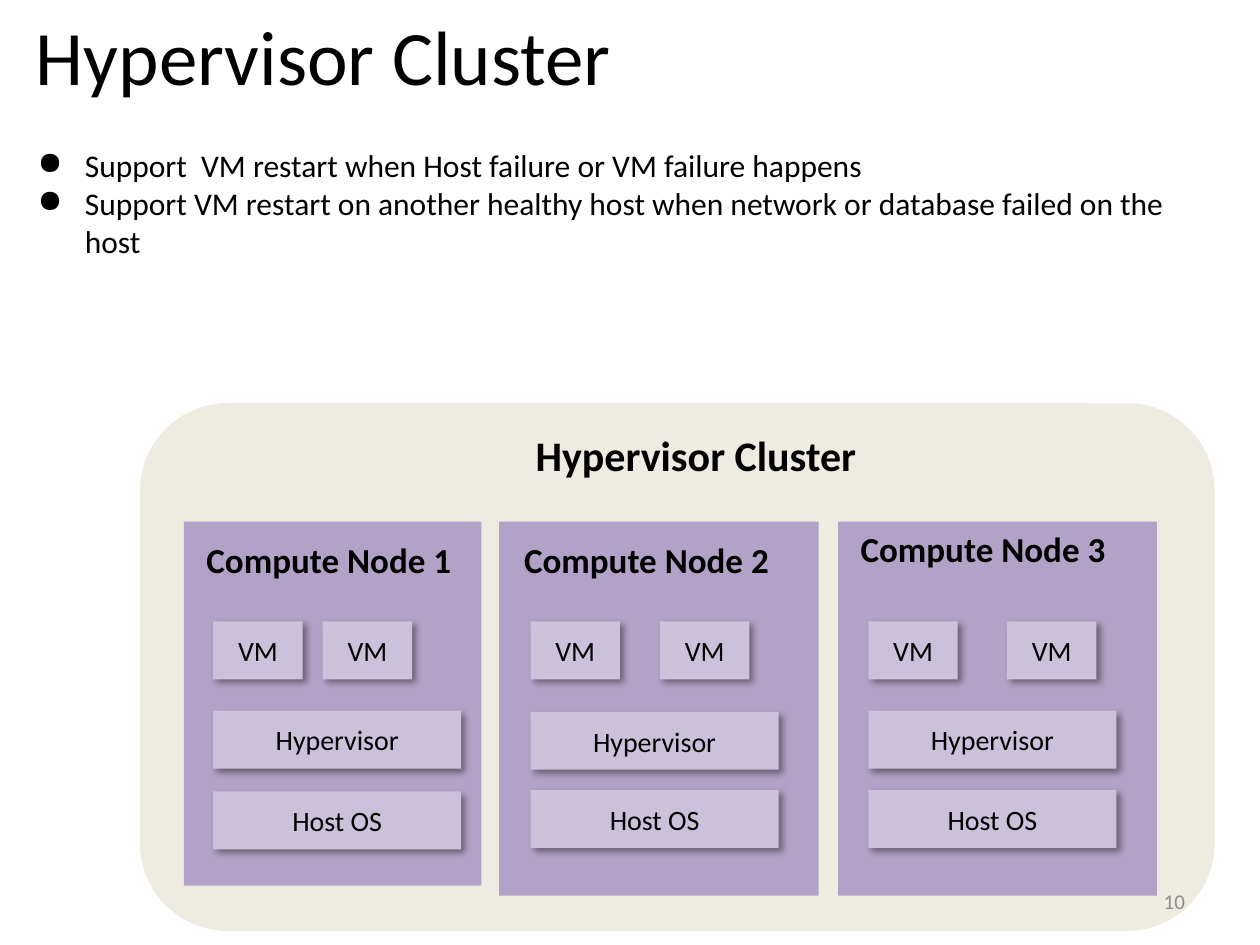
from lxml.etree import SubElement
from pptx import Presentation
from pptx.dml.color import RGBColor
from pptx.enum.shapes import MSO_SHAPE as Shape
from pptx.enum.text import MSO_ANCHOR as Anchor, PP_ALIGN as Align
from pptx.oxml.ns import qn
from pptx.util import Pt

COLORS = {
    "text": "000000",
    "number": "8C8C8C",
    "cluster": "EEECE1",
    "node": "B3A2C7",
    "part": "CCC1DA",
}
PART_HEIGHT = 33.1
VM_WIDTH = 51.1
BAR_WIDTH = 141.8


def color(name):
    return RGBColor.from_string(COLORS[name])


def write(shape, lines, size, align=Align.LEFT, anchor=Anchor.TOP,
          bold=False, ink="text"):
    frame = shape.text_frame
    frame.word_wrap = True
    frame.vertical_anchor = anchor
    for index, line in enumerate(lines):
        paragraph = frame.paragraphs[0] if index == 0 else frame.add_paragraph()
        paragraph.alignment = align
        run = paragraph.add_run()
        run.text = line
        for key, value in {"name": "Calibri", "size": Pt(size), "bold": bold}.items():
            setattr(run.font, key, value)
        run.font.color.rgb = color(ink)


def add_text(slide, box, lines, size, **style):
    text = slide.shapes.add_textbox(*map(Pt, box))
    write(text, lines, size, **style)
    return text


def add_block(slide, box, fill, kind=Shape.RECTANGLE):
    block = slide.shapes.add_shape(kind, *map(Pt, box))
    block.fill.solid()
    block.fill.fore_color.rgb = color(fill)
    block.line.fill.background()
    block.shadow.inherit = False
    return block


def add_part(slide, box, label):
    """A labelled part of a node, with a soft shadow to the lower right."""
    part = add_block(slide, box, "part")
    write(part, [label], 16, align=Align.CENTER, anchor=Anchor.MIDDLE)
    effects = part.element.spPr.find(qn("a:effectLst"))
    shadow = SubElement(effects, qn("a:outerShdw"), blurRad=str(Pt(4)),
                        dist=str(Pt(3)), dir="2700000", algn="tl", rotWithShape="0")
    black = SubElement(shadow, qn("a:srgbClr"), val="000000")
    SubElement(black, qn("a:alpha"), val="40000")


def add_bullets(slide, box, lines):
    bullets = add_text(slide, box, lines, 18)
    for paragraph in bullets.text_frame.paragraphs:
        properties = paragraph._p.get_or_add_pPr()
        properties.set("marL", str(Pt(27)))
        properties.set("indent", str(-Pt(27)))
        SubElement(properties, qn("a:buChar"), char="●")


def add_node(slide, box, name, heading, inset, vm_step, bar_tops):
    """A compute node: heading, two VMs, then the hypervisor and host bars."""
    left, top, width, height = box
    add_block(slide, box, "node")
    dx, dy = heading
    add_text(slide, (left + dx, top + dy, 166, 31.5), [name], 20, bold=True)
    for column in range(2):
        add_part(slide, (left + inset + column * vm_step, top + 57,
                         VM_WIDTH, PART_HEIGHT), "VM")
    for label, bar_top in zip(("Hypervisor", "Host OS"), bar_tops):
        add_part(slide, (left + inset, top + bar_top, BAR_WIDTH, PART_HEIGHT), label)


def add_cluster(slide, box):
    left, top, width, height = box
    add_block(slide, box, "cluster", Shape.ROUNDED_RECTANGLE)
    add_text(slide, (left + 126.7, top + 11.5, 376.6, 36), [" Hypervisor Cluster"],
             24, align=Align.CENTER, bold=True)
    # left, width, height, heading offset, part inset, VM step, bar tops
    nodes = [
        (25.1, 170, 208, (5.8, 5.8), 16.7, 62.6, (108, 154.2)),
        (205.2, 182.6, 213.8, (7.2, 5.8), 18, 73.9, (108.7, 153.4)),
        (398.9, 182.2, 213.8, (5.8, 0), 17.3, 79.2, (108, 153.4)),
    ]
    for number, (node_left, width, height, *layout) in enumerate(nodes, 1):
        add_node(slide, (left + node_left, top + 67.8, width, height),
                 f"Compute Node {number}", *layout)


def main():
    deck = Presentation()
    deck.slide_width, deck.slide_height = Pt(720), Pt(540)
    slide = deck.slides.add_slide(deck.slide_layouts[6])

    # Title
    add_text(slide, (-139, -13.7, 648, 90), ["Hypervisor Cluster"], 44,
             align=Align.CENTER, anchor=Anchor.MIDDLE)
    # Cluster diagram
    add_cluster(slide, (80, 230.3, 614.2, 301.7))
    # Restart features
    add_bullets(slide, (14.4, 80, 686.2, 94.3), [
        "Support  VM restart when Host failure or VM failure happens",
        "Support VM restart on another healthy host when network or database "
        "failed on the host",
    ])
    # Slide number
    add_text(slide, (516.2, 500.5, 168, 28.8), ["10"], 12, align=Align.RIGHT,
             anchor=Anchor.MIDDLE, ink="number")

    deck.save("out.pptx")


if __name__ == "__main__":
    main()
